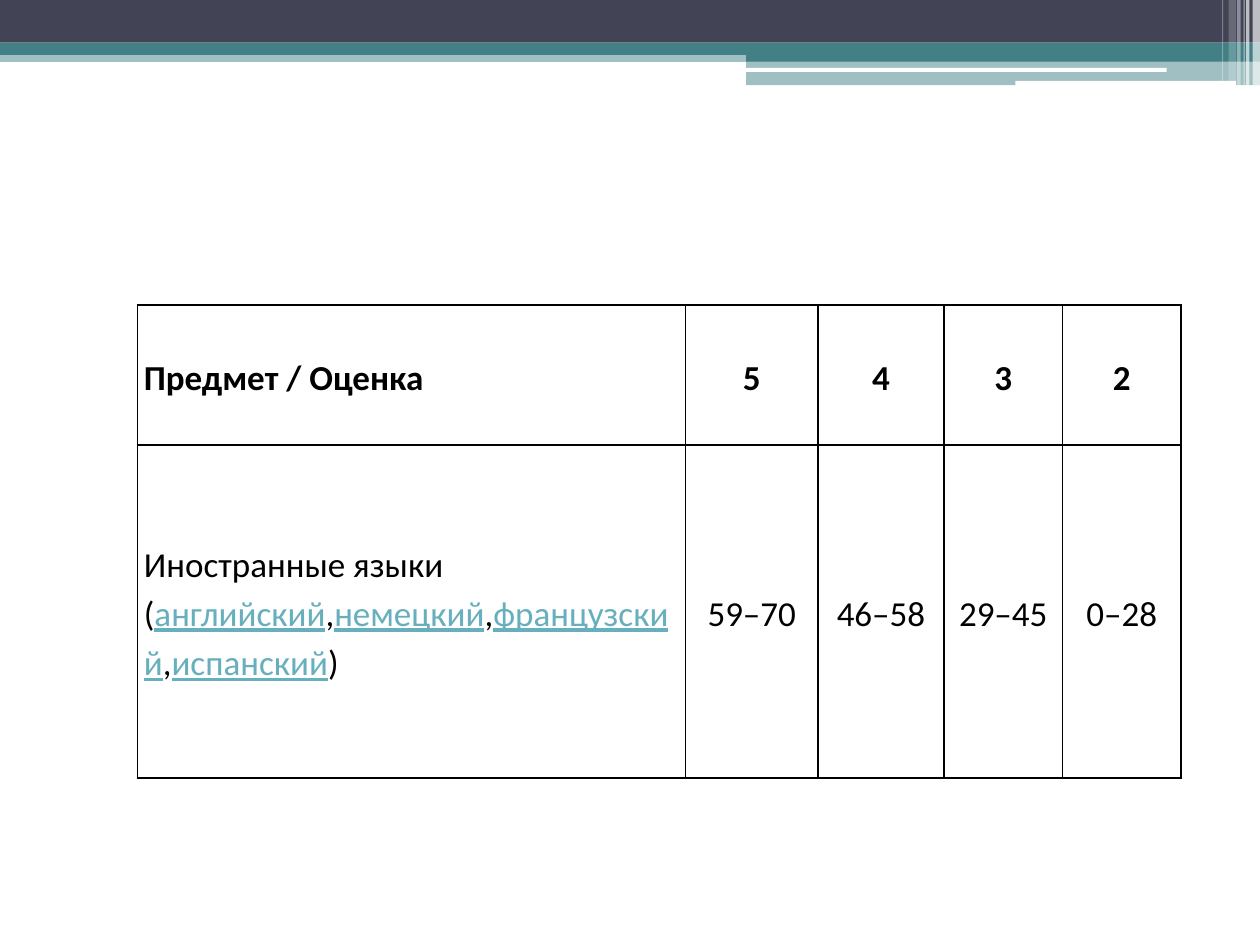
"""Build a slide with the grade scale for foreign languages."""
from lxml.etree import SubElement
from pptx import Presentation
from pptx.dml.color import RGBColor
from pptx.enum.shapes import MSO_SHAPE as Shape
from pptx.enum.text import MSO_ANCHOR as Anchor, PP_ALIGN as Align
from pptx.oxml import parse_xml
from pptx.oxml.ns import nsdecls, qn
from pptx.util import Cm, Pt

NAVY = RGBColor(0x42, 0x44, 0x56)
TEAL = RGBColor(0x43, 0x80, 0x86)
LINK = RGBColor(0x67, 0xAF, 0xBD)
WHITE = RGBColor(0xFF, 0xFF, 0xFF)
BLACK = RGBColor(0x00, 0x00, 0x00)


def add_text(paragraph, text, color=BLACK, bold=False, underline=False):
    run = paragraph.add_run()
    run.text = text
    run.font.name = "Calibri"
    run.font.size = Pt(20)
    run.font.color.rgb = color
    run.font.bold = bold
    run.font.underline = underline


def add_band(slide, kind, left, top, width, height, color, opacity):
    band = slide.shapes.add_shape(kind, Cm(left), Cm(top), Cm(width), Cm(height))
    band.shadow.inherit = False
    band.line.fill.background()
    band.fill.solid()
    band.fill.fore_color.rgb = color
    if opacity < 100:
        tint = band.fill._xPr.find(qn("a:solidFill"))[0]
        SubElement(tint, qn("a:alpha"), val=str(opacity * 1000))


prs = Presentation()
prs.slide_width, prs.slide_height = Cm(25.4), Cm(19.05)
slide = prs.slides.add_slide(prs.slide_layouts[6])

header_bands = [
    (Shape.RECTANGLE, 0, 1.02, 25.4, 0.23, TEAL, 50),
    (Shape.RECTANGLE, 0, 0, 25.4, 0.86, NAVY, 100),
    (Shape.RECTANGLE, 0, 0.86, 25.4, 0.25, TEAL, 100),
    (Shape.RECTANGLE, 15.04, 0.99, 10.36, 0.25, TEAL, 100),
    (Shape.RECTANGLE, 15.04, 1.22, 10.36, 0.5, TEAL, 50),
    (Shape.ROUNDED_RECTANGLE, 15.01, 1.37, 8.51, 0.08, WHITE, 100),
    (Shape.ROUNDED_RECTANGLE, 20.47, 1.63, 4.45, 0.1, WHITE, 100),
]
for band in header_bands:
    add_band(slide, *band)

edge_stripes = [
    (25.25, 0.15, 1.73, 65),
    (25.12, 0.07, 1.73, 65),
    (25.07, 0.02, 1.73, 60),
    (24.94, 0.07, 1.73, 40),
    (24.77, 0.15, 1.63, 20),
    (24.64, 0.02, 1.63, 30),
]
for left, width, height, opacity in edge_stripes:
    add_band(slide, Shape.RECTANGLE, left, 0, width, height, WHITE, opacity)

subject = [("Иностранные языки (", False)]
for language, ending in [("английский", ","), ("немецкий", ","), ("французский", ","), ("испанский", ")")]:
    subject += [(language, True), (ending, False)]
grade_rows = [
    [[("Предмет / Оценка", False)], "5", "4", "3", "2"],
    [subject, "59–70", "46–58", "29–45", "0–28"],
]
column_widths = [11.05, 2.67, 2.54, 2.39, 2.39]
row_heights = [2.82, 6.71]

grades = slide.shapes.add_table(
    len(row_heights), len(column_widths), Cm(2.77), Cm(6.15),
    Cm(sum(column_widths)), Cm(sum(row_heights))).table
for column, width in zip(grades.columns, column_widths):
    column.width = Cm(width)
for row, height in zip(grades.rows, row_heights):
    row.height = Cm(height)

for r, row in enumerate(grade_rows):
    for c, content in enumerate(row):
        cell = grades.cell(r, c)
        cell.vertical_anchor = Anchor.MIDDLE
        cell.margin_left = cell.margin_right = Cm(0.13)
        cell.margin_top = cell.margin_bottom = Cm(0.13)
        paragraph = cell.text_frame.paragraphs[0]
        paragraph.line_spacing = 1.15
        paragraph.alignment = Align.CENTER if c else Align.LEFT
        for text, linked in content if c == 0 else [(content, False)]:
            add_text(paragraph, text, color=LINK if linked else BLACK,
                     bold=r == 0, underline=linked)
        cell_format = cell._tc.get_or_add_tcPr()
        for side in ("lnL", "lnR", "lnT", "lnB"):
            cell_format.append(parse_xml(
                f'<a:{side} {nsdecls("a")} w="{Pt(1)}"><a:solidFill>'
                f'<a:srgbClr val="{BLACK}"/></a:solidFill></a:{side}>'))
        cell.fill.solid()
        cell.fill.fore_color.rgb = WHITE

prs.save("out.pptx")
